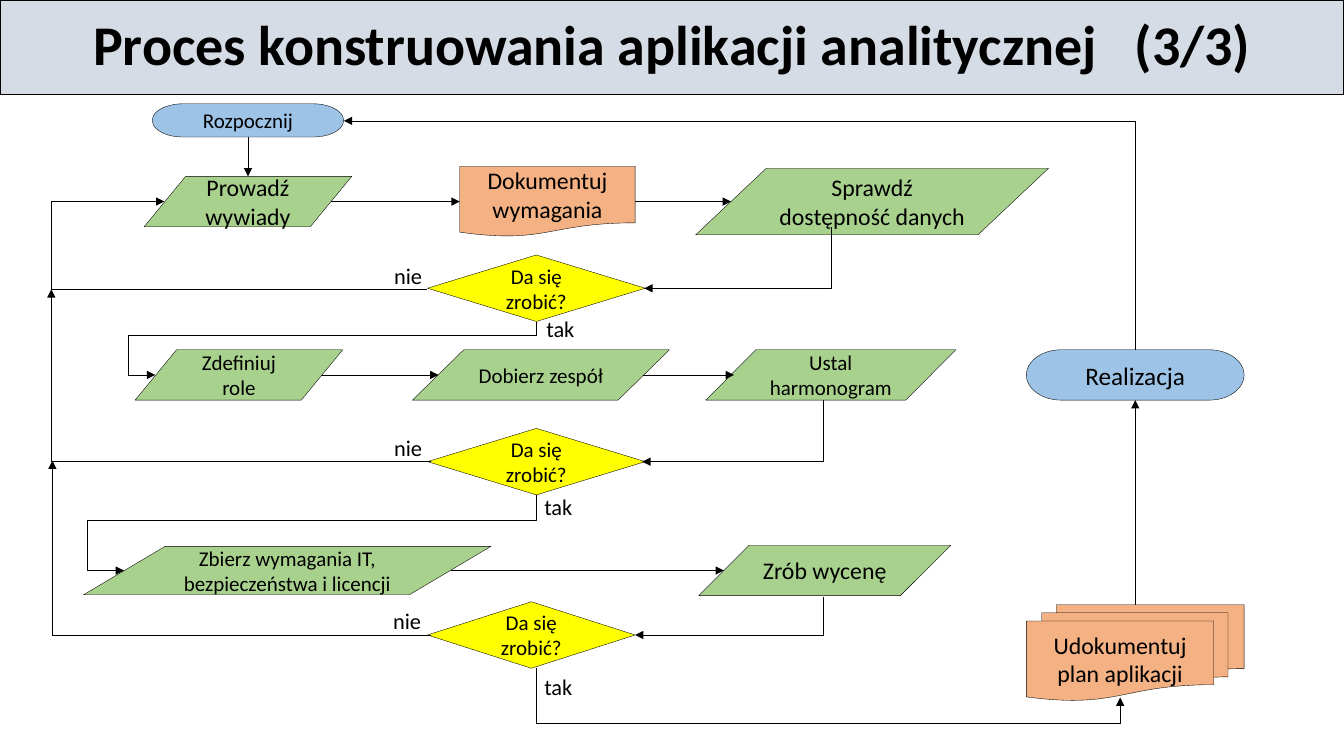
import pptx
import pptx.util
from pptx.dml.color import RGBColor
from pptx.enum.shapes import MSO_CONNECTOR, MSO_SHAPE
from pptx.enum.text import MSO_ANCHOR, MSO_AUTO_SIZE, PP_ALIGN
from pptx.oxml.ns import qn
from lxml import etree

Inches = pptx.util.Inches
Pt = pptx.util.Pt

BLACK = "000000"
GREEN = "A9D18E"
BLUE = "9DC3E6"
ORANGE = "F4B183"
YELLOW = "FFFF00"
TOP, LEFT, BOTTOM, RIGHT = range(4)
STEP_LEFT = 2  # joint on the slanted left side of a step


def color(value):
    return RGBColor.from_string(value)


def style_box(s, fill, line_width):
    s.fill.solid()
    s.fill.fore_color.rgb = color(fill)
    s.line.color.rgb = color(BLACK)
    s.line.width = Pt(line_width)


def write(s, text, size, align=PP_ALIGN.CENTER, bold=False):
    p = s.text_frame.paragraphs[0]
    p.text = text
    p.alignment = align
    p.font.name = "Calibri"
    p.font.size = Pt(size)
    p.font.bold = bold
    p.font.color.rgb = color(BLACK)
    return p


def add_title(slide, text):
    s = slide.shapes.title
    s.left, s.top = Inches(0), Inches(0)
    s.width, s.height = Inches(13.33), Inches(0.94)
    style_box(s, "D6DCE5", 0.75)
    s.text_frame.auto_size = MSO_AUTO_SIZE.NONE
    s.text_frame.vertical_anchor = MSO_ANCHOR.MIDDLE
    write(s, text, 40, bold=True).line_spacing = 0.9


def add_box(slide, kind, fill, text, x, y, w, h, size):
    s = slide.shapes.add_shape(kind, Inches(x), Inches(y), Inches(w), Inches(h))
    s.shadow.inherit = False
    style_box(s, fill, 0.25)
    s.text_frame.word_wrap = True
    s.text_frame.vertical_anchor = MSO_ANCHOR.MIDDLE
    write(s, text, size)
    return s


def add_step(slide, text, x, y, w, h, size=15):
    return add_box(slide, MSO_SHAPE.FLOWCHART_DATA, GREEN, text, x, y, w, h, size)


def add_decision(slide, x, y, w):
    return add_box(slide, MSO_SHAPE.DIAMOND, YELLOW, "Da się zrobić?", x, y, w, 0.66, 15)


def add_terminator(slide, text, x, y, w, h, size):
    return add_box(slide, MSO_SHAPE.FLOWCHART_TERMINATOR, BLUE, text, x, y, w, h, size)


def add_label(slide, text, x, y):
    s = slide.shapes.add_textbox(Inches(x), Inches(y), Inches(0.48), Inches(0.37))
    s.text_frame.word_wrap = False
    s.text_frame.auto_size = MSO_AUTO_SIZE.SHAPE_TO_FIT_TEXT
    write(s, text, 16, PP_ALIGN.LEFT)


def add_arrow(slide, x1, y1, x2, y2, start=None, end=None, kind=MSO_CONNECTOR.STRAIGHT):
    """start and end are (shape, side) joints."""
    s = slide.shapes.add_connector(kind, Inches(x1), Inches(y1), Inches(x2), Inches(y2))
    s.line.color.rgb = color(BLACK)
    s.line.width = Pt(0.25)
    etree.SubElement(s._element.spPr, qn("a:effectLst"))
    etree.SubElement(s.line._get_or_add_ln(), qn("a:tailEnd"), type="triangle")
    if start:
        s.begin_connect(*start)
    if end:
        s.end_connect(*end)
    return s


def add_elbow(slide, x1, y1, x2, y2, preset, bends=(), down_first=False, **joints):
    """Bends are shares of the run; down_first leaves the start vertically."""
    s = add_arrow(slide, x1, y1, x2, y2, kind=MSO_CONNECTOR.ELBOW, **joints)
    w, h = abs(x2 - x1), abs(y2 - y1)
    flip_h, flip_v = x2 < x1, y2 < y1
    xfrm = s._element.spPr.find(qn("a:xfrm"))
    if down_first:
        w, h = h, w
        xfrm.set("rot", str((270 if flip_v else 90) * 60000))
        flip_h, flip_v = False, (x2 > x1) != flip_v
        if y2 < y1:
            flip_v = x2 < x1
    xfrm.set("flipH", str(int(flip_h)))
    xfrm.set("flipV", str(int(flip_v)))
    s.left, s.top = Inches((x1 + x2 - w) / 2), Inches((y1 + y2 - h) / 2)
    s.width, s.height = Inches(w), Inches(h)
    geometry = s._element.spPr.find(qn("a:prstGeom"))
    geometry.set("prst", preset)
    guides = geometry.find(qn("a:avLst"))
    for n, bend in enumerate(bends, 1):
        etree.SubElement(guides, qn("a:gd"), name=f"adj{n}" if len(bends) > 1 else "adj1",
                         fmla=f"val {round(bend * 100000)}")


def main():
    prs = pptx.Presentation()
    prs.slide_width, prs.slide_height = Inches(13.33), Inches(7.5)
    slide = prs.slides.add_slide(prs.slide_layouts[5])
    add_title(slide, "Proces konstruowania aplikacji analitycznej   (3/3)")

    # Start, end and documents
    begin = add_terminator(slide, "Rozpocznij", 1.51, 1.03, 1.9, 0.33, 15)
    realization = add_terminator(slide, "Realizacja", 10.18, 3.47, 2.16, 0.5, 18)
    requirements = add_box(slide, MSO_SHAPE.FLOWCHART_DOCUMENT, ORANGE,
                           "Dokumentuj wymagania", 4.56, 1.65, 1.74, 0.7, 17)
    plan = add_box(slide, MSO_SHAPE.FLOWCHART_MULTIDOCUMENT, ORANGE,
                   "Udokumentuj plan aplikacji", 10.18, 6, 2.16, 0.95, 17)

    # Process steps
    interviews = add_step(slide, "Prowadź wywiady", 1.43, 1.75, 2.06, 0.5, 17)
    add_step(slide, "Sprawdź dostępność danych", 6.9, 1.67, 3.5, 0.66, 17)
    roles = add_step(slide, "Zdefiniuj role", 1.34, 3.47, 2.06, 0.5)
    add_step(slide, "Dobierz zespół", 4.09, 3.47, 2.55, 0.5)
    add_step(slide, "Ustal harmonogram", 7, 3.47, 2.48, 0.5)
    needs = add_step(slide, "Zbierz wymagania IT, bezpieczeństwa i licencji",
                     0.83, 5.42, 4.04, 0.48)
    add_step(slide, "Zrób wycenę", 6.93, 5.41, 2.5, 0.5, 17)

    # Decisions
    data_check = add_decision(slide, 4.24, 2.53, 2.16)
    team_check = add_decision(slide, 4.24, 4.25, 2.16)
    cost_check = add_decision(slide, 4.24, 5.97, 2.06)

    # Arrows along the rows
    add_arrow(slide, 2.46, 1.36, 2.46, 1.75, start=(begin, BOTTOM))
    add_arrow(slide, 3.28, 2, 4.56, 2, end=(requirements, LEFT))
    add_arrow(slide, 6.3, 2, 7.25, 2, start=(requirements, RIGHT))
    for x1, x2, y in [(3.19, 4.35, 3.72), (6.38, 7.28, 3.72), (4.47, 7.18, 5.66)]:
        add_arrow(slide, x1, y, x2, y)

    # Arrows down into the decisions
    add_elbow(slide, 8.24, 2.25, 6.39, 2.86, "bentConnector3", [0], end=(data_check, RIGHT))
    add_elbow(slide, 8.17, 3.97, 6.37, 4.58, "bentConnector3", [0])
    add_elbow(slide, 8.17, 5.92, 6.3, 6.3, "bentConnector3", [0], end=(cost_check, RIGHT))

    # "No" returns on the left
    add_elbow(slide, 4.24, 2.87, 1.63, 2, "bentConnector3", [1.43],
              start=(data_check, LEFT), end=(interviews, STEP_LEFT))
    add_elbow(slide, 4.28, 4.58, 0.51, 2.87, "bentConnector3", [1])
    add_elbow(slide, 4.28, 6.3, 0.52, 4.57, "bentConnector3", [1])

    # "Yes" ways onward
    add_elbow(slide, 5.32, 3.19, 1.54, 3.72, "bentConnector4", [0.26, 1.07], True,
              start=(data_check, BOTTOM), end=(roles, STEP_LEFT))
    add_elbow(slide, 5.32, 4.91, 1.23, 5.66, "bentConnector4", [0.34, 1.09], True,
              start=(team_check, BOTTOM), end=(needs, STEP_LEFT))
    add_elbow(slide, 5.32, 6.63, 11.11, 6.92, "bentConnector4", [0, 1.87],
              end=(plan, BOTTOM))

    # Plan to realization and back to the start
    add_arrow(slide, 11.26, 6, 11.26, 3.97, end=(realization, BOTTOM))
    add_elbow(slide, 11.26, 3.47, 3.41, 1.2, "bentConnector2", down_first=True,
              start=(realization, TOP), end=(begin, RIGHT))

    # Branch labels
    for text, x, y in [("nie", 3.81, 2.55), ("nie", 3.81, 4.26), ("nie", 3.8, 5.97),
                       ("tak", 5.32, 3.08), ("tak", 5.3, 4.84), ("tak", 5.3, 6.63)]:
        add_label(slide, text, x, y)

    prs.save("out.pptx")


if __name__ == "__main__":
    main()
